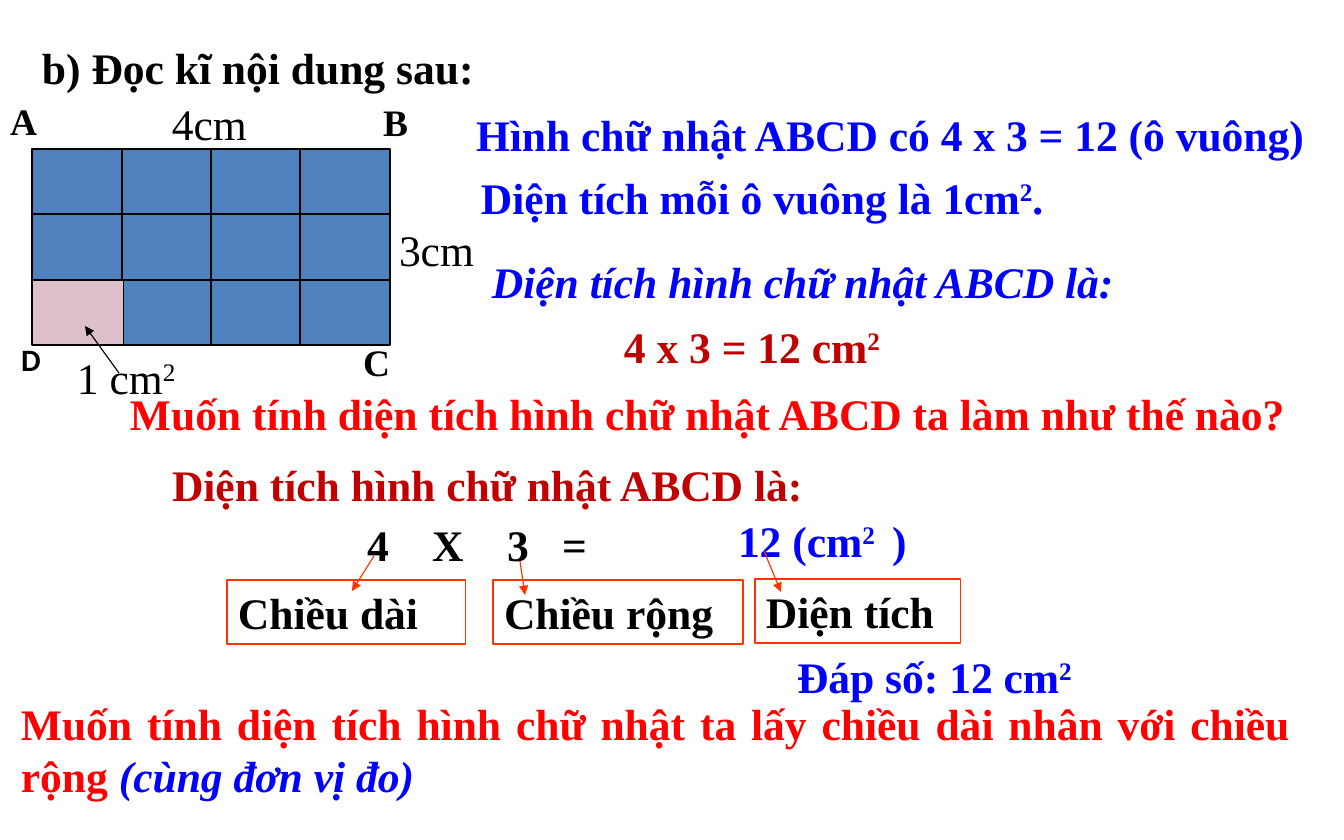
from dataclasses import dataclass
from typing import NamedTuple

from lxml.etree import SubElement
from pptx import Presentation
from pptx.dml.color import RGBColor
from pptx.enum.shapes import MSO_CONNECTOR, MSO_SHAPE
from pptx.enum.text import MSO_ANCHOR, MSO_AUTO_SIZE as AutoSize, PP_ALIGN
from pptx.oxml.ns import qn
from pptx.util import Emu, Pt

COLORS = {
    "black": "000000", "blue": "0000FF", "red": "FF0000", "dark_red": "C00000",
    "orange": "FF3300", "grid": "4F81BD", "pink": "DEC0CD",
}
SERIF = "Times New Roman"


class Run(NamedTuple):
    text: str
    color: str = "black"
    bold: bool = True
    italic: bool = False
    sup: bool = False


@dataclass
class Label:
    x: int
    y: int
    w: int
    runs: list[Run]
    h: int = 64
    size: int = 28
    font: str = SERIF
    justify: bool = False
    boxed: bool = False
    tabs: tuple[int, ...] = ()


class Line(NamedTuple):
    x1: int
    y1: int
    x2: int
    y2: int
    color: str = "black"
    arrow: bool = False


def px(n: int) -> Emu:
    return Emu(round(n * 914400 / 112))


def rgb(name: str) -> RGBColor:
    return RGBColor.from_string(COLORS[name])


def squared(text: str, color: str, bold: bool = True) -> list[Run]:
    """Runs for a text that ends in a raised 2."""
    return [Run(text, color, bold), Run("2", color, bold, sup=True)]


def add_rect(s, x: int, y: int, w: int, h: int, line: str, fill: str = ""):
    sp = s.shapes.add_shape(MSO_SHAPE.RECTANGLE, px(x), px(y), px(w), px(h))
    sp.shadow.inherit = False
    if fill:
        sp.fill.solid()
        sp.fill.fore_color.rgb = rgb(fill)
    else:
        sp.fill.background()
    sp.line.color.rgb = rgb(line)
    sp.line.width = Pt(0.75)
    return sp


def add_line(s, line: Line) -> None:
    cx = s.shapes.add_connector(MSO_CONNECTOR.STRAIGHT, px(line.x1), px(line.y1),
                                px(line.x2), px(line.y2))
    cx.line.color.rgb = rgb(line.color)
    cx.line.width = Pt(0.75)
    if line.arrow:
        SubElement(cx.line._get_or_add_ln(), qn("a:tailEnd"), type="triangle")
    SubElement(cx._element.spPr, qn("a:effectLst"))


def add_label(s, label: Label) -> None:
    if label.boxed:
        sp = add_rect(s, label.x, label.y, label.w, label.h, "orange")
    else:
        sp = s.shapes.add_textbox(px(label.x), px(label.y), px(label.w), px(label.h))
    tf = sp.text_frame
    tf.word_wrap = True
    tf.auto_size = AutoSize.SHAPE_TO_FIT_TEXT
    tf.vertical_anchor = MSO_ANCHOR.TOP
    p = tf.paragraphs[0]
    p.alignment = PP_ALIGN.JUSTIFY if label.justify else PP_ALIGN.LEFT
    if label.tabs:
        tab_list = SubElement(p._p.get_or_add_pPr(), qn("a:tabLst"))
        for tab in label.tabs:
            SubElement(tab_list, qn("a:tab"), pos=str(px(tab)), algn="l")
    for run in label.runs:
        r = p.add_run()
        r.text = run.text
        r.font.name = label.font
        r.font.size = Pt(label.size)
        r.font.bold = run.bold
        r.font.italic = run.italic
        r.font.color.rgb = rgb(run.color)
        if run.sup:
            r._r.get_or_add_rPr().set("baseline", "30000")


def add_grid(s, x: int, y: int, w: int, h: int, cols: int, rows: int) -> None:
    """Rectangle ABCD cut into unit squares, the bottom left one tinted."""
    add_rect(s, x, y, w, h, "black", "grid")
    xs = [x + round(w * i / cols) for i in range(1, cols)]
    ys = [y + round(h * i / rows) for i in range(1, rows)]
    for cut in xs:
        add_line(s, Line(cut, y, cut, y + h))
    for cut in ys:
        add_line(s, Line(x, cut, x + w, cut))
    add_rect(s, x, ys[-1], 92, y + h - ys[-1], "black", "pink")


LABELS = [
    Label(-1, 93, 90, [Run("A")], 56, 24),
    Label(372, 94, 90, [Run("B")], 56, 24),
    Label(352, 334, 90, [Run("C")], 56, 24),
    Label(10, 335, 90, [Run("D")], 49, 20, "Calibri"),
    Label(161, 91, 168, [Run("4cm", bold=False)]),
    Label(388, 217, 110, [Run("3cm", bold=False)]),
    Label(66, 345, 198, squared("1 cm", "black", bold=False)),
    Label(31, 35, 492, [Run("b) Đọc kĩ nội dung sau:")]),
    Label(465, 102, 866, [Run("Hình chữ nhật ABCD có 4 x 3 = 12 (ô vuông)", "blue")]),
    Label(470, 165, 767, squared("Diện tích mỗi ô vuông là 1cm", "blue") + [Run(".", "blue")]),
    Label(481, 249, 708, [Run("Diện tích hình chữ nhật ABCD là:", "blue", italic=True)],
          justify=True),
    Label(613, 314, 301, squared("4 x 3 = 12 cm", "dark_red")),
    Label(119, 381, 1206,
          [Run("Muốn tính diện tích hình chữ nhật ABCD ta làm như thế nào?", "red")]),
    Label(161, 452, 1036, [Run("Diện tích hình chữ nhật ABCD là:", "dark_red")]),
    Label(356, 512, 403, [Run("4\tX\t3\t=")], tabs=(65, 140, 195)),
    Label(727, 508, 216,
          [Run("12 (cm", "blue"), Run("2 ", "blue", sup=True), Run(" )", "blue")]),
    Label(227, 580, 239, [Run("Chiều dài")], boxed=True),
    Label(493, 580, 250, [Run("Chiều rộng")], boxed=True),
    Label(755, 579, 206, [Run("Diện tích")], boxed=True),
    Label(786, 644, 314, squared("Đáp số: 12 cm", "blue")),
    Label(10, 691, 1291,
          [Run("Muốn tính diện tích hình chữ nhật ta lấy chiều dài nhân với chiều rộng ", "red"),
           Run("(cùng đơn vị đo)", "blue", italic=True)], 116, justify=True),
]

ARROWS = [
    Line(119, 373, 85, 326, "black", True),
    Line(374, 556, 352, 591, "orange", True),
    Line(520, 561, 525, 595, "orange", True),
    Line(764, 551, 781, 592, "orange", True),
]


def main() -> None:
    prs = Presentation()
    prs.slide_width, prs.slide_height = px(1344), px(840)
    s = prs.slides.add_slide(prs.slide_layouts[6])
    add_grid(s, 32, 149, 358, 196, cols=4, rows=3)
    for label in LABELS:
        add_label(s, label)
    for arrow in ARROWS:
        add_line(s, arrow)
    prs.save("out.pptx")


if __name__ == "__main__":
    main()
